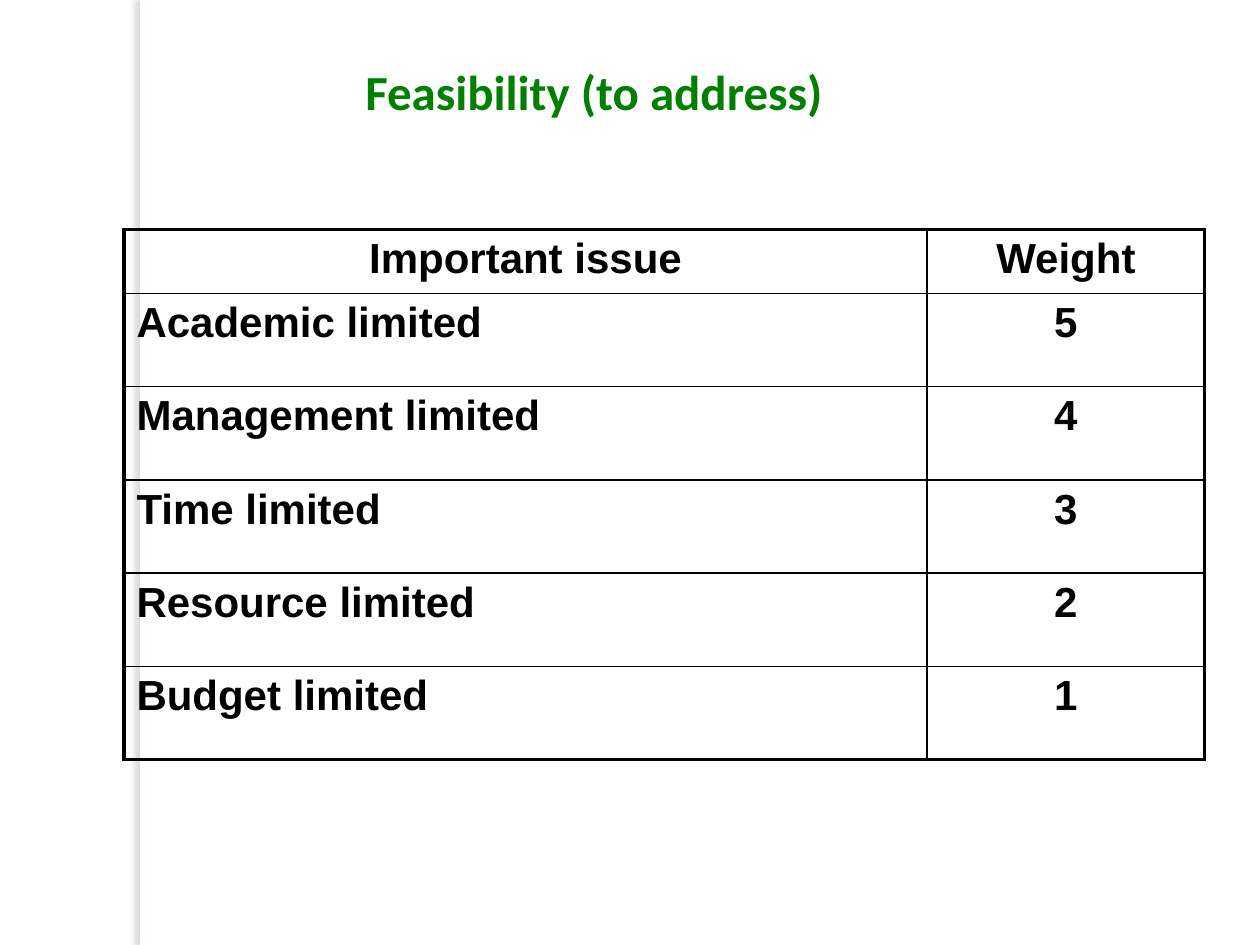
from lxml.etree import SubElement
from pptx import Presentation
from pptx.dml.color import RGBColor
from pptx.enum.shapes import MSO_SHAPE as Shape
from pptx.enum.text import MSO_ANCHOR as Anchor, PP_ALIGN as Align
from pptx.oxml import parse_xml
from pptx.oxml.ns import nsdecls, qn
from pptx.util import Pt

BLACK = RGBColor(0x00, 0x00, 0x00)
WHITE = RGBColor(0xFF, 0xFF, 0xFF)
GREEN = RGBColor(0x00, 0x80, 0x00)
SHADE = RGBColor(0x73, 0x6F, 0x63)

SLIDE_WIDTH, SLIDE_HEIGHT = 720, 540
THIN, THICK = 1, 2.25

ISSUES = [
    ("Important issue", "Weight"),
    ("Academic limited", "5"),
    ("Management limited", "4"),
    ("Time limited", "3"),
    ("Resource limited", "2"),
    ("Budget limited", "1"),
]


class Deck:
    """Holds the style and the current slide; lengths are in points."""

    title_font, body_font = "Calibri", "Arial"
    title_size, body_size = 28, 24

    def __init__(self, width, height):
        self.prs = Presentation()
        self.prs.slide_width, self.prs.slide_height = Pt(width), Pt(height)
        self.slide = self.prs.slides.add_slide(self.prs.slide_layouts[5])

    def style(self, paragraph, name, size, color, align):
        paragraph.alignment = align
        font = paragraph.font
        font.name, font.size, font.bold = name, Pt(size), True
        font.color.rgb = color

    def title(self, text, left, top, width, height):
        title = self.slide.shapes.title
        title.left, title.top = Pt(left), Pt(top)
        title.width, title.height = Pt(width), Pt(height)
        frame = title.text_frame
        frame.text = text
        frame.word_wrap = True
        frame.vertical_anchor = Anchor.TOP
        self.style(frame.paragraphs[0], self.title_font, self.title_size, GREEN, Align.LEFT)

    def strip(self, left, top, width, height):
        """White strip that casts a soft shadow to its left."""
        strip = self.slide.shapes.add_shape(
            Shape.RECTANGLE, Pt(left), Pt(top), Pt(width), Pt(height))
        strip.fill.solid()
        strip.fill.fore_color.rgb = WHITE
        strip.line.fill.background()
        strip.shadow.inherit = False
        effects = strip.element.spPr.find(qn("a:effectLst"))
        shadow = SubElement(effects, qn("a:outerShdw"), blurRad=str(Pt(3)),
                            dist=str(Pt(3)), dir="10800000", rotWithShape="0")
        color = SubElement(shadow, qn("a:srgbClr"), val=str(SHADE))
        SubElement(color, qn("a:alpha"), val="25000")

    def borders(self, cell, widths):
        props = cell._tc.get_or_add_tcPr()
        for index, (side, width) in enumerate(zip("LRTB", widths)):
            props.insert(index, parse_xml(
                f'<a:ln{side} {nsdecls("a")} w="{Pt(width)}"><a:solidFill>'
                f'<a:srgbClr val="{BLACK}"/></a:solidFill></a:ln{side}>'))

    def table(self, rows, left, top, col_widths, row_heights):
        table = self.slide.shapes.add_table(
            len(rows), len(col_widths), Pt(left), Pt(top),
            Pt(sum(col_widths)), Pt(sum(row_heights))).table
        table.first_row = table.horz_banding = False
        for column, width in zip(table.columns, col_widths):
            column.width = Pt(width)
        for row, height in zip(table.rows, row_heights):
            row.height = Pt(height)

        last_row, last_col = len(rows) - 1, len(col_widths) - 1
        for r, row in enumerate(rows):
            for c, text in enumerate(row):
                cell = table.cell(r, c)
                cell.text = text
                cell.fill.background()
                align = Align.LEFT if r > 0 and c == 0 else Align.CENTER
                self.style(cell.text_frame.paragraphs[0], self.body_font,
                           self.body_size, BLACK, align)
                # Thick on the outer frame, thin inside
                outer = (c == 0, c == last_col, r == 0, r == last_row)
                self.borders(cell, [THICK if edge else THIN for edge in outer])


def main():
    deck = Deck(SLIDE_WIDTH, SLIDE_HEIGHT)

    # Side strip and heading
    deck.strip(80, 0, 5.5, SLIDE_HEIGHT)
    deck.title("Feasibility (to address)", 201.6, 31.7, 311.8, 41)

    # Issues by weight
    deck.table(ISSUES, 70.8, 131.2, [459, 158.6], [36.4] + [53.3] * 5)

    deck.prs.save("out.pptx")


if __name__ == "__main__":
    main()
